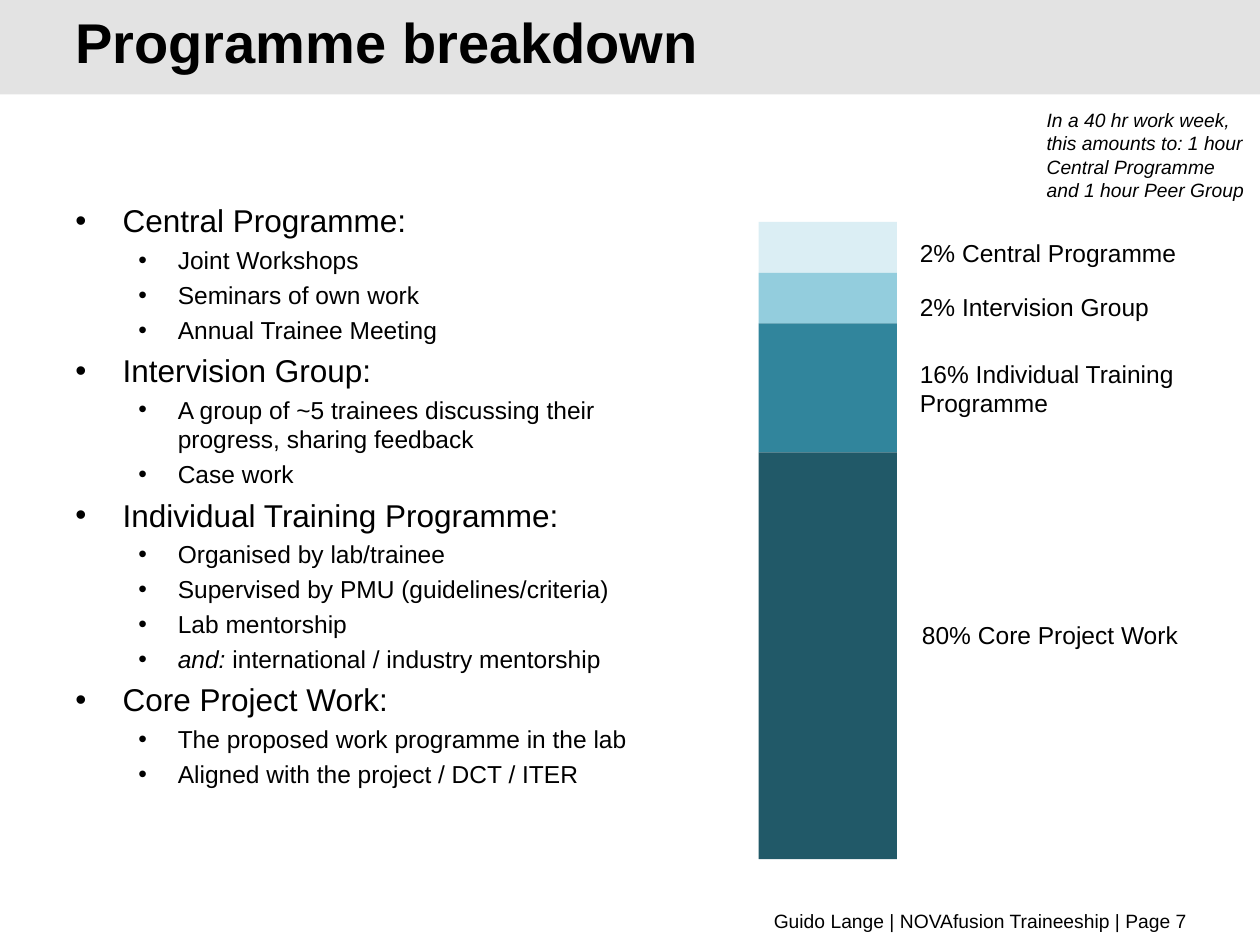
import pptx
import pptx.util
import pptx.dml.color
import pptx.enum.shapes
import pptx.enum.text
import pptx.oxml.ns
import lxml.etree

Pt = pptx.util.Pt
RGB = pptx.dml.color.RGBColor.from_string
ALIGN = pptx.enum.text.PP_ALIGN
ANCHOR = pptx.enum.text.MSO_ANCHOR

theme = {
    "font": "Arial", "ink": "000000", "band": "E3E3E3",
    "title": 32, "head": 18, "text": 14, "note": 11,
    "bar": ["DBEEF4", "93CDDD", "31859C", "215968"],
}

deck = pptx.Presentation()
deck.slide_width, deck.slide_height = Pt(720), Pt(540)
slide = deck.slides.add_slide(deck.slide_layouts[6])


def block(x, y, w, h, color):
    shape = slide.shapes.add_shape(
        pptx.enum.shapes.MSO_SHAPE.RECTANGLE, Pt(x), Pt(y), Pt(w), Pt(h))
    shape.shadow.inherit = False
    shape.fill.solid()
    shape.fill.fore_color.rgb = RGB(color)
    shape.line.fill.background()


def label(x, y, w, h, text, size, wrap=True):
    frame = slide.shapes.add_textbox(Pt(x), Pt(y), Pt(w), Pt(h)).text_frame
    frame.word_wrap = wrap
    para = frame.paragraphs[0]
    para.text = text
    font = para.font
    font.name, font.size = theme["font"], Pt(theme[size])
    font.color.rgb = RGB(theme["ink"])
    return frame


block(0, 0, 720, 54, theme["band"])
title = label(36, 8.5, 594, 36, "Programme breakdown", "title")
title.vertical_anchor = ANCHOR.MIDDLE
title.paragraphs[0].font.bold = True
title.paragraphs[0].line_spacing = Pt(32)

topics = [
    ("Central Programme:",
     ["Joint Workshops", "Seminars of own work", "Annual Trainee Meeting"]),
    ("Intervision Group:",
     ["A group of ~5 trainees discussing their progress, sharing feedback",
      "Case work"]),
    ("Individual Training Programme:",
     ["Organised by lab/trainee", "Supervised by PMU (guidelines/criteria)",
      "Lab mentorship", "and: international / industry mentorship"]),
    ("Core Project Work:",
     ["The proposed work programme in the lab",
      "Aligned with the project / DCT / ITER"]),
]
rows = []
for head, items in topics:
    rows.append((head, 0, "head", 27, 27, 4))
    rows += [(item, 1, "text", 58.5, 22.5, 3.2) for item in items]

body = slide.shapes.add_textbox(Pt(36), Pt(111.6), Pt(363.6), Pt(385)).text_frame
body.word_wrap = True
for i, (text, level, size, left, hang, gap) in enumerate(rows):
    para = body.add_paragraph() if i else body.paragraphs[0]
    para.level = level
    if i:
        para.space_before = Pt(gap)
    props = para._p.get_or_add_pPr()
    props.set("marL", str(Pt(left)))
    props.set("indent", str(-Pt(hang)))
    mark = lxml.etree.SubElement(props, pptx.oxml.ns.qn("a:buFont"))
    mark.set("typeface", theme["font"])
    mark = lxml.etree.SubElement(props, pptx.oxml.ns.qn("a:buChar"))
    mark.set("char", "•")
    font = para.font
    font.name, font.size = theme["font"], Pt(theme[size])
    font.color.rgb = RGB(theme["ink"])
    lead, colon, rest = text.partition("and: ")
    if colon:
        run = para.add_run()
        run.text = colon
        run.font.italic = True
    para.add_run().text = rest if colon else lead

top = 126.75
for height, color in zip([29, 29, 73.75, 232.5], theme["bar"]):
    block(433.5, top, 79, height, color)
    top += height

for x, y, w, h, text, wrap in [
    (518.5, 132.5, 162, 24.5, "2% Central Programme", False),
    (518.5, 163.5, 146, 24.5, "2% Intervision Group", False),
    (518.5, 201.5, 167, 41, "16% Individual Training Programme", True),
    (519.75, 350.75, 162, 24.5, "80% Core Project Work", False),
]:
    label(x, y, w, h, text, "text", wrap)

note = label(591, 58.5, 130.5, 60.5, "In a 40 hr work week, this amounts to: "
             "1 hour Central Programme and 1 hour Peer Group", "note")
note.paragraphs[0].font.italic = True

foot = label(36.5, 515.75, 649, 21,
             "Guido Lange | NOVAfusion Traineeship | Page 7", "note")
foot.vertical_anchor = ANCHOR.MIDDLE
foot.paragraphs[0].alignment = ALIGN.RIGHT

deck.save("out.pptx")
